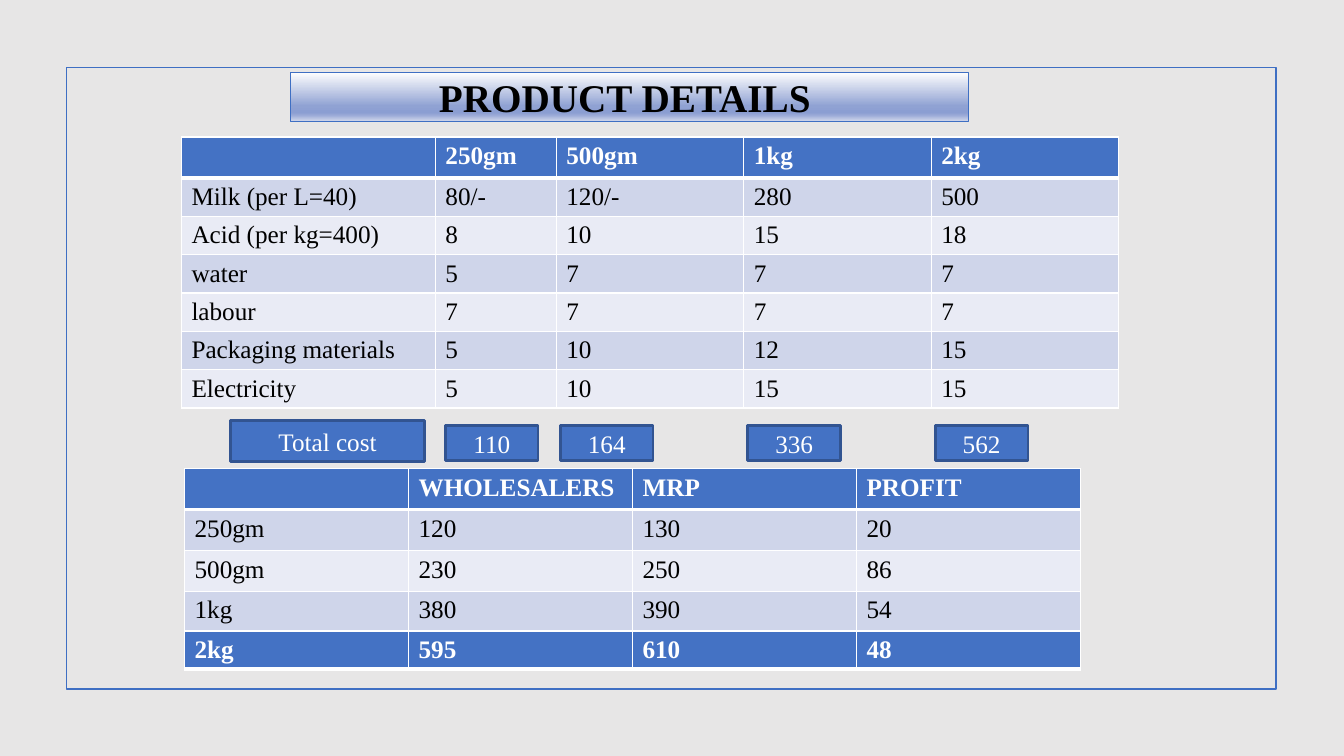
from dataclasses import dataclass

from lxml.etree import SubElement
from pptx import Presentation
from pptx.dml.color import RGBColor as RGB
from pptx.enum.shapes import MSO_SHAPE as SHAPE
from pptx.enum.text import MSO_ANCHOR as ANCHOR, MSO_AUTO_SIZE as FIT, PP_ALIGN as ALIGN
from pptx.oxml import parse_xml
from pptx.oxml.ns import nsdecls, qn
from pptx.util import Pt


@dataclass(frozen=True)
class Theme:
    """Colours, font and type sizes of the slide."""
    font: str = "Times New Roman"
    title_size: int = 28
    body_size: int = 18
    page: str = "E7E6E6"
    accent: str = "4472C4"
    outline: str = "3F6FC3"
    badge_line: str = "325491"
    bands: tuple = ("CFD5EA", "E9EBF5")
    white: str = "FFFFFF"
    black: str = "000000"
    gradient: tuple = ((0, "FEFEFE"), (68, "90A2D3"), (81, "8B9ED2"),
                       (86, "98A8D6"), (100, "D6DBED"))


T = Theme()

COST_COLS = (181.4, 86.4, 133.9, 133.9, 133.9)
COSTS = (
    ("", "250gm", "500gm", "1kg", "2kg"),
    ("Milk (per L=40)", "80/-", "120/-", "280", "500"),
    ("Acid (per kg=400)", "8", "10", "15", "18"),
    ("water", "5", "7", "7", "7"),
    ("labour", "7", "7", "7", "7"),
    ("Packaging materials", "5", "10", "12", "15"),
    ("Electricity", "5", "10", "15", "15"),
)
TOTALS = (("110", 7.2), ("164", 2.9), ("336", 2.9), ("562", 2.9))
PRICE_COLS = (160,) * 4
PRICES = (
    ("", "WHOLESALERS", "MRP", "PROFIT"),
    ("250gm", "120", "130", "20"),
    ("500gm", "230", "250", "86"),
    ("1kg", "380", "390", "54"),
)
LARGEST_PACK = (("2kg", "595", "610", "48"),)


def add_text(tf, text, size, color, bold=False, align=ALIGN.LEFT):
    """Write one formatted run into the first paragraph."""
    p = tf.paragraphs[0]
    p.alignment = align
    r = p.add_run()
    r.text = text
    r.font.name, r.font.size, r.font.bold = T.font, Pt(size), bold
    r.font.color.rgb = RGB.from_string(color)


def set_line(sp, color, width):
    """Give a shape a solid outline."""
    sp.line.color.rgb = RGB.from_string(color)
    sp.line.width = Pt(width)


def add_box(slide, x, y, w, h):
    """Add a rectangle without a shadow."""
    sp = slide.shapes.add_shape(SHAPE.RECTANGLE, Pt(x), Pt(y), Pt(w), Pt(h))
    sp.shadow.inherit = False
    return sp


def add_frame(slide, x, y, w, h):
    """Draw the thin frame around the content."""
    sp = add_box(slide, x, y, w, h)
    sp.fill.background()
    set_line(sp, T.outline, 1.25)


def add_title(slide, x, y, w, h):
    """Place the title on its gradient bar."""
    sp = slide.shapes.title
    sp.left, sp.top, sp.width, sp.height = Pt(x), Pt(y), Pt(w), Pt(h)
    stops = "".join(f'<a:gs pos="{pos * 1000}"><a:srgbClr val="{color}"/></a:gs>'
                    for pos, color in T.gradient)
    set_line(sp, T.outline, 0.75)
    sp.line._ln.addprevious(parse_xml(
        f'<a:gradFill {nsdecls("a")} rotWithShape="1"><a:gsLst>{stops}</a:gsLst>'
        '<a:lin ang="5400000" scaled="0"/></a:gradFill>'))
    tf = sp.text_frame
    tf.auto_size, tf.vertical_anchor = FIT.NONE, ANCHOR.MIDDLE
    add_text(tf, "PRODUCT DETAILS ", T.title_size, T.black, True, ALIGN.CENTER)


def add_badge(slide, text, x, y, w, h):
    """Draw one filled label with centred text."""
    sp = add_box(slide, x, y, w, h)
    sp.fill.solid()
    sp.fill.fore_color.rgb = RGB.from_string(T.accent)
    set_line(sp, T.badge_line, 2)
    sp.text_frame.vertical_anchor = ANCHOR.MIDDLE
    add_text(sp.text_frame, text, T.body_size, T.white, align=ALIGN.CENTER)


def add_totals(slide, x, y):
    """Line up the total cost badges under the columns of the cost table."""
    add_badge(slide, "Total cost", x + 35.3, y, 138.2, 29.5)
    for i, (total, inset) in enumerate(TOTALS, 1):
        add_badge(slide, total, x + sum(COST_COLS[:i]) + inset, y + 3.8, 66.2, 25.2)


def set_borders(cell, top, bottom):
    """Give a cell white borders of the stated widths."""
    tcPr = cell._tc.get_or_add_tcPr()
    sides = (("lnL", 1), ("lnR", 1), ("lnT", top), ("lnB", bottom))
    for i, (tag, width) in enumerate(sides):
        ln = SubElement(tcPr, qn(f"a:{tag}"), w=str(Pt(width)))
        fill = SubElement(ln, qn("a:solidFill"))
        SubElement(fill, qn("a:srgbClr"), val=T.white)
        tcPr.insert(i, ln)


def add_grid(slide, rows, cols, x, y, row_h):
    """Add a banded table with a bold first row."""
    shape = slide.shapes.add_table(len(rows), len(cols), Pt(x), Pt(y),
                                   Pt(sum(cols)), Pt(row_h * len(rows)))
    table = shape.table
    for col, width in zip(table.columns, cols):
        col.width = Pt(width)
    for i, values in enumerate(rows):
        table.rows[i].height = Pt(row_h)
        head = i == 0
        for j, text in enumerate(values):
            cell = table.cell(i, j)
            cell.fill.solid()
            color = T.accent if head else T.bands[(i - 1) % 2]
            cell.fill.fore_color.rgb = RGB.from_string(color)
            set_borders(cell, 3 if i == 1 else 1, 3 if head else 1)
            if text:
                add_text(cell.text_frame, text, T.body_size,
                         T.white if head else T.black, head)


def build_product_slide(prs):
    """Build the product details slide."""
    slide = prs.slides.add_slide(prs.slide_layouts[5])
    slide.background.fill.solid()
    slide.background.fill.fore_color.rgb = RGB.from_string(T.page)
    add_frame(slide, 47.5, 48.2, 864, 444.2)
    add_title(slide, 207.4, 51.8, 484.6, 35.3)
    add_grid(slide, COSTS, COST_COLS, 129.6, 97.9, 27.4)
    add_totals(slide, 129.6, 300.2)
    add_grid(slide, PRICES, PRICE_COLS, 131.8, 334.8, 29.2)
    add_grid(slide, LARGEST_PACK, PRICE_COLS, 131.8, 450.7, 27.4)


def main():
    """Create and save the presentation."""
    prs = Presentation()
    prs.slide_width, prs.slide_height = Pt(960), Pt(540)
    build_product_slide(prs)
    prs.save("out.pptx")


if __name__ == "__main__":
    main()
